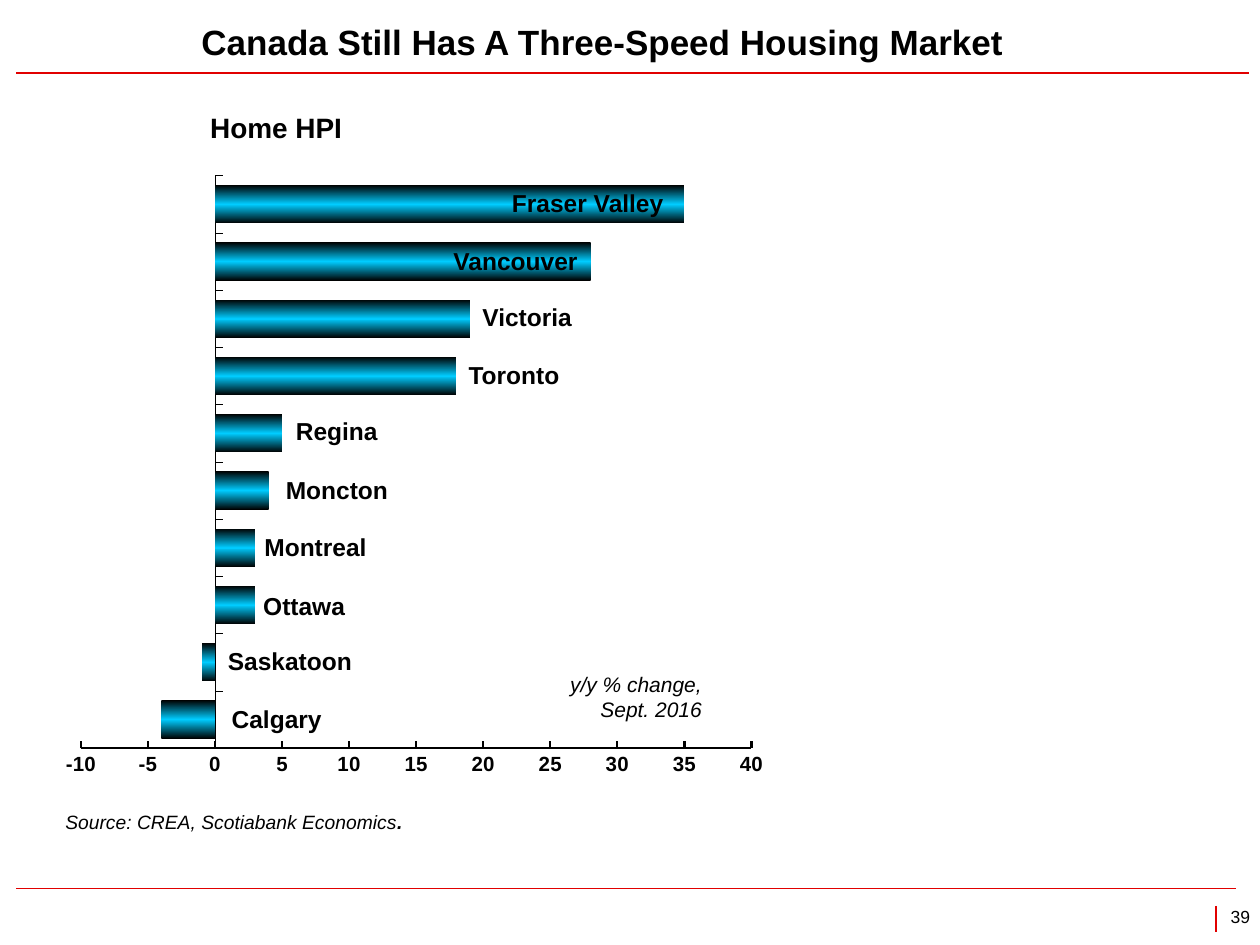
from pptx import Presentation
from pptx.chart.data import CategoryChartData
from pptx.dml.color import RGBColor
from pptx.enum.chart import XL_CHART_TYPE, XL_TICK_LABEL_POSITION, XL_TICK_MARK
from pptx.enum.text import MSO_ANCHOR, MSO_AUTO_SIZE, PP_ALIGN
from pptx.oxml import parse_xml
from pptx.oxml.ns import nsdecls
from pptx.util import Inches, Pt
from lxml.etree import SubElement

BLACK = RGBColor(0, 0, 0)
RED = RGBColor(0xE1, 0, 0)
DARK = RGBColor(0, 1, 1)
CYAN = RGBColor(0, 0xCC, 0xFF)
FONT = "Arial"
LEFT, MID, RIGHT = PP_ALIGN.LEFT, PP_ALIGN.CENTER, PP_ALIGN.RIGHT

# City, change in percent, label left, top and width, from bottom to top
CITIES = [
    ("Calgary", -4, 1.74, 5.54, 2.24),
    ("Saskatoon", -1, 1.71, 5.08, 1.54),
    ("Ottawa", 3, 1.99, 4.64, 2.12),
    ("Montreal", 3, 2, 4.17, 1.83),
    ("Moncton", 4, 2.17, 3.72, 1.54),
    ("Regina", 5, 2.25, 3.25, 2.06),
    ("Toronto", 18, 3.62, 2.81, 2.45),
    ("Victoria", 19, 3.73, 2.35, 1.95),
    ("Vancouver", 28, 3.5, 1.9, 1.75),
    ("Fraser Valley", 35, 3.5, 1.44, 2.33),
]


def assign(item, values):
    for key, value in values.items():
        setattr(item, key, value)


class Page:
    """Holds the text style and the current slide."""

    def __init__(self, deck):
        self.slide = deck.slides.add_slide(deck.slide_layouts[6])

    def style(self, font, size, **more):
        assign(font, {"name": FONT, "size": Pt(size), **more})
        font.color.rgb = BLACK

    def text(self, box, runs, size, align=LEFT, **frame):
        """Each run is a pair of its words and a dict of font values."""
        shape = self.slide.shapes.add_textbox(*map(Inches, box))
        body = shape.text_frame
        assign(body, {"word_wrap": True,
                      "auto_size": MSO_AUTO_SIZE.SHAPE_TO_FIT_TEXT, **frame})
        para = body.paragraphs[0]
        para.alignment = align
        for words, look in runs:
            run = para.add_run()
            run.text = words
            self.style(run.font, size, **look)

    def line(self, *ends):
        rule = self.slide.shapes.add_connector(1, *map(Inches, ends))
        rule.line.color.rgb = RED
        rule.line.width = Pt(0.75)
        rule._element.spPr.append(
            parse_xml(f"<a:effectLst {nsdecls('a')}/>"))

    def bars(self, box, rows, plot):
        data = CategoryChartData()
        data.categories = [str(n + 1) for n in range(len(rows))]
        data.add_series("Series 1", [row[1] for row in rows])
        chart = self.slide.shapes.add_chart(
            XL_CHART_TYPE.BAR_CLUSTERED, *map(Inches, box), data).chart
        assign(chart, {"has_legend": False, "has_title": False})
        self.style(chart.font, 11.7, bold=True)

        # Axes
        city, scale = chart.category_axis, chart.value_axis
        for axis, width in ((city, 0.32), (scale, 1.3)):
            assign(axis, {"has_major_gridlines": False,
                          "major_tick_mark": XL_TICK_MARK.INSIDE,
                          "minor_tick_mark": XL_TICK_MARK.NONE})
            axis.format.line.color.rgb = BLACK
            axis.format.line.width = Pt(width)
        city.tick_label_position = XL_TICK_LABEL_POSITION.NONE
        assign(scale, {"minimum_scale": -10, "maximum_scale": 40,
                       "major_unit": 5})
        self.style(scale.tick_labels.font, 11.7, bold=True)
        assign(scale.tick_labels, {"number_format": "0",
                                   "number_format_is_linked": False})

        # Bars shaded from dark to bright and back
        group = chart.plots[0]
        assign(group, {"gap_width": 50, "vary_by_categories": False})
        series = group.series[0]
        series.invert_if_negative = False
        stops = "".join(
            f'<a:gs pos="{pos}"><a:srgbClr val="{tone}"/></a:gs>'
            for pos, tone in ((0, DARK), (50000, CYAN), (100000, DARK)))
        series._element.get_or_add_spPr().append(parse_xml(
            f'<a:gradFill {nsdecls("a")} rotWithShape="1"><a:gsLst>{stops}'
            '</a:gsLst><a:lin ang="5400000" scaled="0"/></a:gradFill>'))

        # Inner plot area
        area = chart._chartSpace.chart.plotArea
        for old in area.findall("{*}layout"):
            area.remove(old)
        layout = parse_xml(f"<c:layout {nsdecls('c')}><c:manualLayout/>"
                           "</c:layout>")
        rules = {"layoutTarget": "inner", "xMode": "edge", "yMode": "edge",
                 **dict(zip("xywh", plot))}
        for tag, value in rules.items():
            name = layout.tag.replace("layout", tag)
            SubElement(layout[0], name, val=str(value))
        area.insert(0, layout)


def main():
    deck = Presentation()
    deck.slide_width, deck.slide_height = Inches(10), Inches(7.5)
    page = Page(deck)
    bold, slant = {"bold": True}, {"italic": True}

    # Frame lines and page number
    page.line(0.13, 0.58, 9.91, 0.58)
    page.line(0.13, 7.05, 9.81, 7.05)
    page.line(9.65, 7.19, 9.65, 7.4)
    sides = ("left", "top", "right", "bottom")
    page.text((9.57, 7.19, 0.35, 0.17), [("39", {})], 10, RIGHT,
              **{f"margin_{side}": 0 for side in sides})

    # Title and source
    page.text((1.5, 0.08, 8.71, 0.5),
              [("Canada Still Has A Three-Speed Housing Market", bold)], 20,
              vertical_anchor=MSO_ANCHOR.MIDDLE,
              auto_size=MSO_AUTO_SIZE.NONE)
    page.text((0.42, 6.38, 4.74, 0.29),
              [("Source: CREA, Scotiabank Economics", slant),
               (".", {**slant, **bold})], 11)

    # Chart with its heading and unit
    page.bars((0.48, 1.38, 5.62, 4.95), CITIES, (0.029, 0.003, 0.947, 0.918))
    page.text((1.57, 0.83, 4.58, 0.37), [("Home HPI", bold)], 16)
    page.text((4.11, 5.28, 1.56, 0.51),
              [("y/y % change, Sept. 2016", slant)], 12, RIGHT)

    # City labels
    for city, _, left, top, width in CITIES:
        align = MID if city == "Fraser Valley" else LEFT
        page.text((left, top, width, 0.34), [(city, bold)], 14, align)

    deck.save("out.pptx")


if __name__ == "__main__":
    main()
